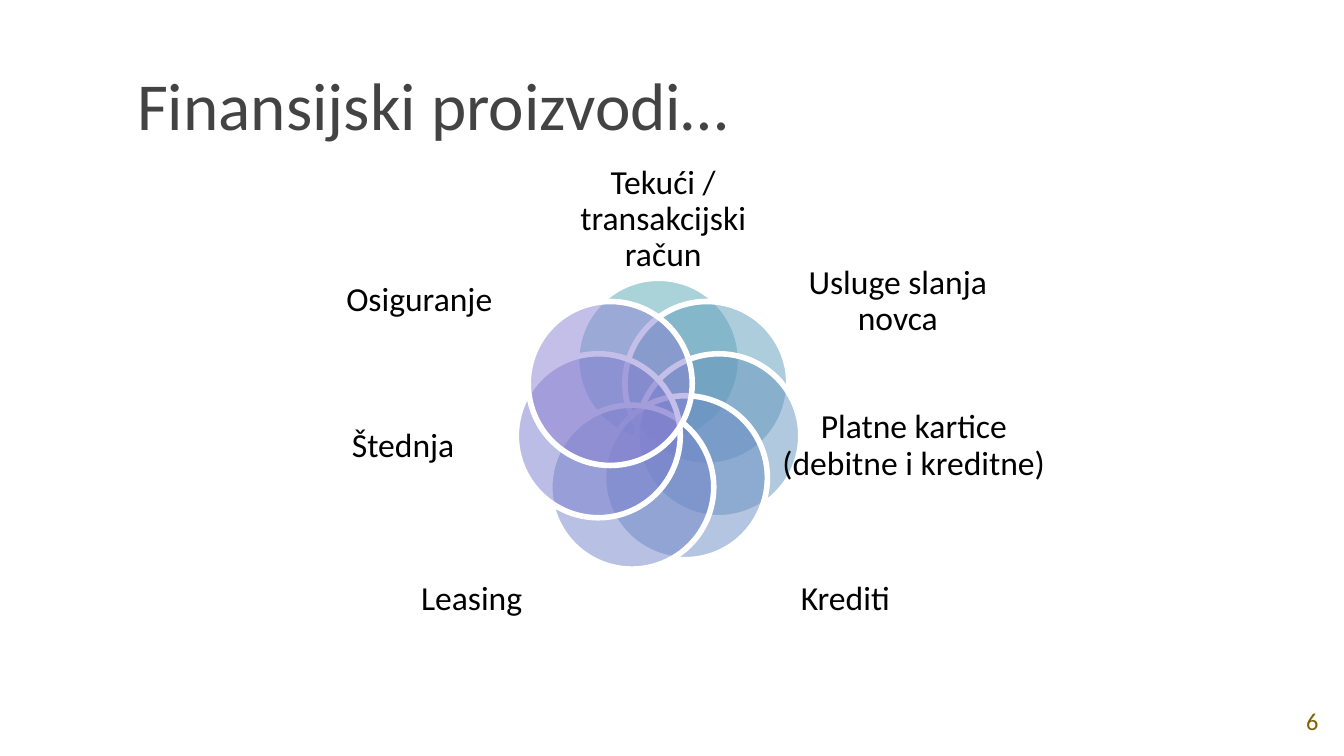
"""Build a slide with seven overlapping circles naming financial products."""
import math

import pptx
import pptx.dml.color
import pptx.enum.shapes
import pptx.enum.text
import pptx.oxml.ns
import pptx.util
from lxml import etree

Inches = pptx.util.Inches
ALIGN = pptx.enum.text.PP_ALIGN
ANCHOR = pptx.enum.text.MSO_ANCHOR

TITLE = "Finansijski proizvodi…"
PAGE = "6"
PRODUCTS = [
    {"label": "Tekući / transakcijski račun", "box": (4.08, 1.31, 1.71, 0.65), "color": "57A7B5"},
    {"label": "Usluge slanja novca", "box": (5.87, 1.93, 1.62, 0.63), "color": "5E9DBA"},
    {"label": "Platne kartice (debitne i kreditne)", "box": (5.77, 2.88, 2.06, 0.88), "color": "6494BF"},
    {"label": "Krediti", "box": (5.59, 4.06, 1.4, 0.81), "color": "6B8CC4"},
    {"label": "Leasing", "box": (2.81, 4.06, 1.4, 0.81), "color": "7284C9", "drop": 0.07},
    {"label": "Štednja", "box": (2.35, 2.88, 1.3, 0.88), "color": "7A7DCE"},
    {"label": "Osiguranje", "box": (2.34, 1.83, 1.56, 0.82), "color": "8B81D2"},
]
THEME = {
    "font": "Calibri", "title": "434343", "page": "7F6000", "label": "000000", "outline": "FFFFFF",
    "title_size": 36, "page_size": 13, "label_size": 18, "line_width": 3, "opacity": 50,
}
CENTER_X, CENTER_Y, RING, DIAMETER = 4.9, 3.14, 0.46, 1.22


def rgb(value):
    return pptx.dml.color.RGBColor.from_string(value)


def write(sp, text, role, align, anchor, inset):
    tf = sp.text_frame
    tf.word_wrap = True
    tf.auto_size = pptx.enum.text.MSO_AUTO_SIZE.NONE
    tf.vertical_anchor = anchor
    tf.margin_left = tf.margin_right = tf.margin_top = tf.margin_bottom = Inches(inset)
    p = tf.paragraphs[0]
    p.alignment = align
    r = p.add_run()
    r.text = text
    r.font.name = THEME["font"]
    r.font.size = pptx.util.Pt(THEME[role + "_size"])
    r.font.color.rgb = rgb(THEME[role])
    return p


def add_circle(shapes, x, y, color):
    sp = shapes.add_shape(pptx.enum.shapes.MSO_SHAPE.OVAL, *map(Inches, (x, y, DIAMETER, DIAMETER)))
    sp.shadow.inherit = False
    sp.fill.solid()
    sp.fill.fore_color.rgb = rgb(color)
    qn = pptx.oxml.ns.qn
    clr = sp._element.spPr.find(qn("a:solidFill")).find(qn("a:srgbClr"))
    etree.SubElement(clr, qn("a:alpha")).set("val", str(THEME["opacity"] * 1000))
    sp.line.color.rgb = rgb(THEME["outline"])
    sp.line.width = pptx.util.Pt(THEME["line_width"])


def main():
    prs = pptx.Presentation()
    prs.slide_width = Inches(10)
    prs.slide_height = prs.slide_width * 9 // 16
    s = prs.slides.add_slide(prs.slide_layouts[5])

    title = s.shapes.title
    title.left, title.top, title.width, title.height = map(Inches, (0.92, 0.23, 6.15, 0.94))
    write(title, TITLE, "title", ALIGN.LEFT, ANCHOR.BOTTOM, 0.1)

    page = s.shapes.add_textbox(*map(Inches, (9.53, 5.11, 0.47, 0.51)))
    write(page, PAGE, "page", ALIGN.CENTER, ANCHOR.MIDDLE, 0.1)

    shapes = s.shapes.add_group_shape().shapes
    for i, product in enumerate(PRODUCTS):
        angle = 2 * math.pi * i / len(PRODUCTS)
        x = CENTER_X + RING * math.sin(angle) - DIAMETER / 2
        y = CENTER_Y - RING * math.cos(angle) - DIAMETER / 2 + product.get("drop", 0)
        add_circle(shapes, x, y, product["color"])
        label = shapes.add_textbox(*map(Inches, product["box"]))
        p = write(label, product["label"], "label", ALIGN.CENTER, ANCHOR.MIDDLE, 0)
        p.line_spacing = 0.9

    prs.save("out.pptx")


if __name__ == "__main__":
    main()
